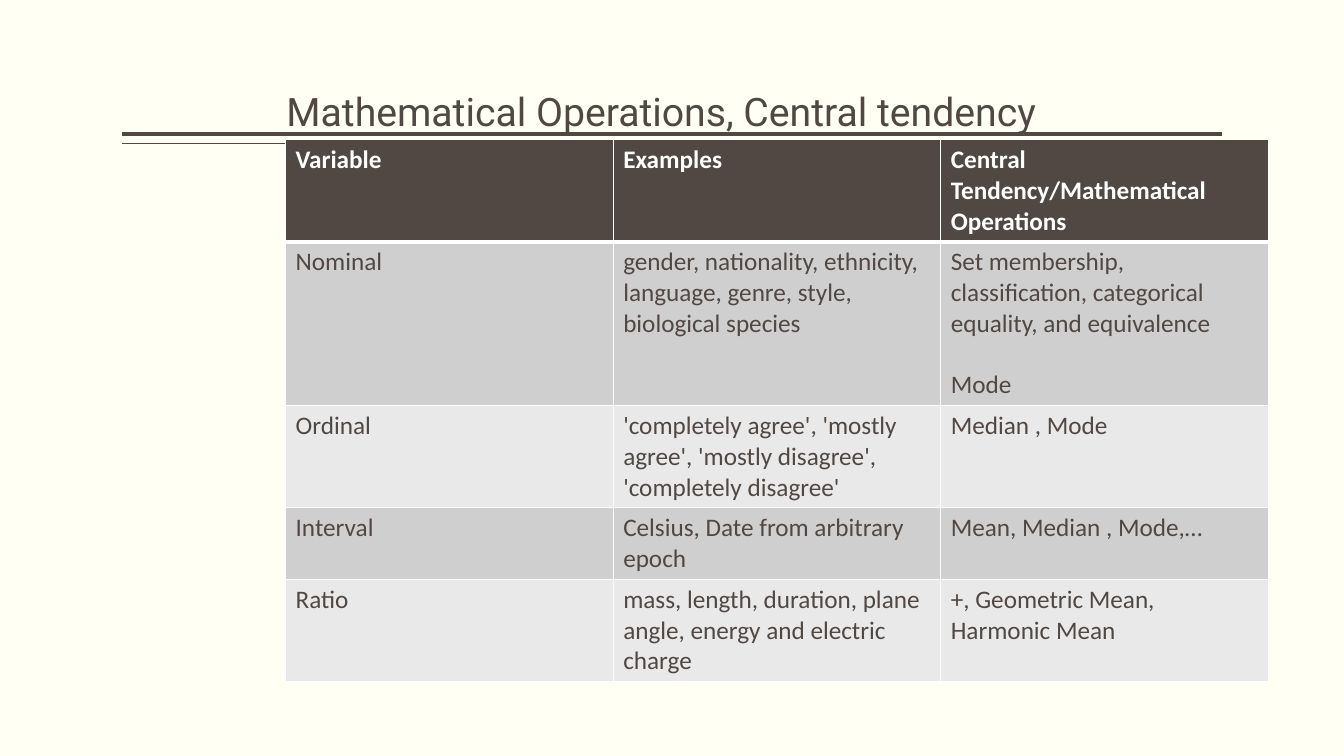
from dataclasses import dataclass

from lxml.etree import SubElement
from pptx import Presentation
from pptx.dml.color import RGBColor
from pptx.enum.shapes import MSO_CONNECTOR
from pptx.enum.text import MSO_ANCHOR
from pptx.oxml.ns import qn
from pptx.util import Inches, Pt


@dataclass(frozen=True)
class Theme:
    paper: str = "FFFFF3"
    ink: str = "514843"
    white: str = "FFFFFF"
    bands: tuple = ("D0CFCF", "E9E9E9")
    title_font: str = "Roboto"
    table_font: str = "Calibri"
    title_size: float = 28
    table_size: float = 18
    blank_line: float = 22
    thin: float = 1
    thick: float = 3


# Grid: 160 columns by 90 rows
COLUMNS, ROWS = 160, 90
LINE_ROWS, CELL_PADDING_ROWS = 3.66, 1.2

HEADINGS = ["Variable", "Examples", "Central Tendency/Mathematical Operations"]
# Each entry: variable, examples, operations (one line per paragraph)
SCALES = [
    ("Nominal",
     "gender, nationality, ethnicity, language, genre, style, biological species",
     "Set membership, classification, categorical equality, and equivalence\nMode"),
    ("Ordinal",
     "'completely agree', 'mostly agree', 'mostly disagree', 'completely disagree'",
     "Median , Mode"),
    ("Interval", "Celsius, Date from arbitrary epoch", "Mean, Median , Mode,…"),
    ("Ratio",
     "mass, length, duration, plane angle, energy and electric charge",
     "+, Geometric Mean, Harmonic Mean"),
]
LINES_PER_ROW = [3, 5, 3, 2, 3]


class SlideBuilder:
    def __init__(self, deck, theme):
        self.theme = theme
        self.column = deck.slide_width / COLUMNS
        self.row = deck.slide_height / ROWS
        self.slide = deck.slides.add_slide(deck.slide_layouts[6])
        background = self.slide.background.fill
        background.solid()
        background.fore_color.rgb = RGBColor.from_string(theme.paper)

    def x(self, columns):
        return round(columns * self.column)

    def y(self, rows):
        return round(rows * self.row)

    def box(self, left, top, width, height):
        return self.x(left), self.y(top), self.x(width), self.y(height)

    def add_text(self, paragraph, text, font, size, color, bold=False):
        run = paragraph.add_run()
        run.text = text
        run.font.name = font
        run.font.size = Pt(size)
        run.font.bold = bold
        run.font.color.rgb = RGBColor.from_string(color)

    def rule(self, left, right, top, weight):
        line = self.slide.shapes.add_connector(
            MSO_CONNECTOR.STRAIGHT, self.x(right), self.y(top), self.x(left), self.y(top))
        line.line.width = Pt(weight)
        line.line.color.rgb = RGBColor.from_string(self.theme.ink)
        SubElement(line._element.spPr, qn("a:effectLst"))

    def title(self, text, *place):
        frame = self.slide.shapes.add_textbox(*self.box(*place)).text_frame
        frame.word_wrap = True
        frame.vertical_anchor = MSO_ANCHOR.BOTTOM
        frame.margin_left = frame.margin_right = 0
        heading = frame.paragraphs[0]
        heading.line_spacing = 0.9
        self.add_text(heading, text, self.theme.title_font, self.theme.title_size,
                      self.theme.ink)

    def border(self, cell, side, weight):
        edge = SubElement(cell._tc.get_or_add_tcPr(), qn(f"a:ln{side}"), w=str(Pt(weight)))
        color = SubElement(SubElement(edge, qn("a:solidFill")), qn("a:srgbClr"))
        color.set("val", self.theme.white)

    def cell(self, cell, text, row):
        theme = self.theme
        is_header = row == 0
        thick_side = {0: "B", 1: "T"}.get(row)
        for side in "LRTB":
            self.border(cell, side, theme.thick if side == thick_side else theme.thin)
        cell.fill.solid()
        cell.fill.fore_color.rgb = RGBColor.from_string(
            theme.ink if is_header else theme.bands[(row - 1) % 2])
        frame = cell.text_frame
        for index, part in enumerate(text.split("\n")):
            paragraph = frame.add_paragraph() if index else frame.paragraphs[0]
            if index:
                paragraph.space_before = Pt(theme.blank_line)
            self.add_text(paragraph, part, theme.table_font, theme.table_size,
                          theme.white if is_header else theme.ink, is_header)

    def table(self, records, line_counts, left, top, column_width):
        heights = [lines * LINE_ROWS + CELL_PADDING_ROWS for lines in line_counts]
        width = column_width * len(records[0])
        grid = self.slide.shapes.add_table(
            len(records), len(records[0]), *self.box(left, top, width, sum(heights))).table
        for column in grid.columns:
            column.width = self.x(column_width)
        for row, (record, height) in enumerate(zip(records, heights)):
            grid.rows[row].height = self.y(height)
            for column, text in enumerate(record):
                self.cell(grid.cell(row, column), text, row)


def main():
    deck = Presentation()
    deck.slide_width, deck.slide_height = Inches(13.33), Inches(7.5)
    theme = Theme()
    builder = SlideBuilder(deck, theme)

    # Double rule under the title
    builder.rule(14.5, 145.5, 16, theme.thick)
    builder.rule(14.5, 145.5, 17.1, theme.thin)

    # Title
    builder.title("Mathematical Operations, Central tendency", 34.1, 8.2, 117, 8.4)

    # Measurement scales
    builder.table([HEADINGS, *SCALES], LINES_PER_ROW, 34, 16.6, 39)

    deck.save("out.pptx")


if __name__ == "__main__":
    main()
